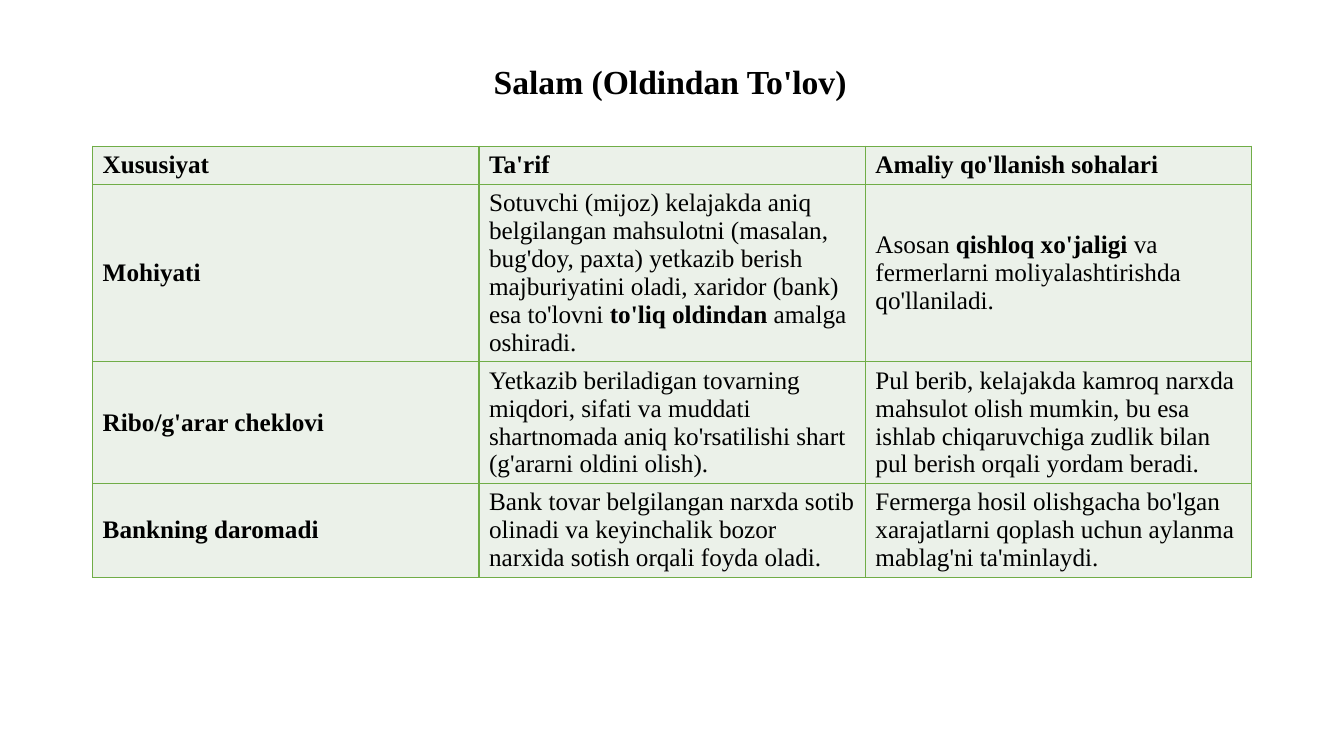
from lxml import etree
from pptx import Presentation
from pptx.dml.color import RGBColor
from pptx.enum.text import MSO_ANCHOR
from pptx.oxml.ns import qn
from pptx.util import Pt

MIDDLE = MSO_ANCHOR.MIDDLE
TOP = MSO_ANCHOR.TOP
BLACK = RGBColor(0x00, 0x00, 0x00)
PALE_GREEN = RGBColor(0xEB, 0xF1, 0xE9)
GREEN = RGBColor(0x70, 0xAD, 0x47)
FONT = "Times New Roman"


def write(tf, text, size=18, bold=False):
    """Fill a text frame; ** switches bold on and off."""
    p = tf.paragraphs[0]
    for i, part in enumerate(text.split("**")):
        r = p.add_run()
        r.text = part
        r.font.name = FONT
        r.font.size = Pt(size)
        r.font.bold = bold or i % 2 == 1
        r.font.color.rgb = BLACK


def set_borders(cell, color, width):
    tcPr = cell._tc.get_or_add_tcPr()
    for i, side in enumerate(("a:lnL", "a:lnR", "a:lnT", "a:lnB")):
        ln = etree.Element(qn(side), w=str(Pt(width)))
        fill = etree.SubElement(ln, qn("a:solidFill"))
        etree.SubElement(fill, qn("a:srgbClr"), val=str(color))
        tcPr.insert(i, ln)


prs = Presentation()
prs.slide_width, prs.slide_height = Pt(960), Pt(540)
s = prs.slides.add_slide(prs.slide_layouts[6])

# Table
rows = [
    ("Xususiyat", "Ta'rif", "Amaliy qo'llanish sohalari"),
    ("Mohiyati",
     "Sotuvchi (mijoz) kelajakda aniq belgilangan mahsulotni (masalan, "
     "bug'doy, paxta) yetkazib berish majburiyatini oladi, xaridor (bank) "
     "esa to'lovni **to'liq oldindan **amalga oshiradi.",
     "Asosan **qishloq xo'jaligi **va fermerlarni moliyalashtirishda "
     "qo'llaniladi."),
    ("Ribo/g'arar cheklovi",
     "Yetkazib beriladigan tovarning miqdori, sifati va muddati shartnomada "
     "aniq ko'rsatilishi shart (g'ararni oldini olish).",
     "Pul berib, kelajakda kamroq narxda mahsulot olish mumkin, bu esa "
     "ishlab chiqaruvchiga zudlik bilan pul berish orqali yordam beradi."),
    ("Bankning daromadi",
     "Bank tovar belgilangan narxda sotib olinadi va keyinchalik bozor "
     "narxida sotish orqali foyda oladi.",
     "Fermerga hosil olishgacha bo'lgan xarajatlarni qoplash uchun aylanma "
     "mablag'ni ta'minlaydi."),
]
heights = [27.1, 126.8, 86.9, 67]

table = s.shapes.add_table(len(rows), 3, Pt(66.2), Pt(104.4),
                           Pt(828), Pt(sum(heights))).table
for i, (row, height) in enumerate(zip(rows, heights)):
    table.rows[i].height = Pt(height)
    for j, text in enumerate(row):
        cell = table.cell(i, j)
        cell.vertical_anchor = MIDDLE
        cell.fill.solid()
        cell.fill.fore_color.rgb = PALE_GREEN
        set_borders(cell, GREEN, 1)
        write(cell.text_frame, text, bold=i == 0 or j == 0)

# Title
sp = s.shapes.add_textbox(Pt(345.6), Pt(41), Pt(269.3), Pt(58.3))
tf = sp.text_frame
tf.word_wrap = False
tf.vertical_anchor = TOP
tf.margin_top, tf.margin_bottom = Pt(2.6), Pt(0)
write(tf, "Salam (Oldindan To'lov)", size=24, bold=True)

prs.save("out.pptx")
